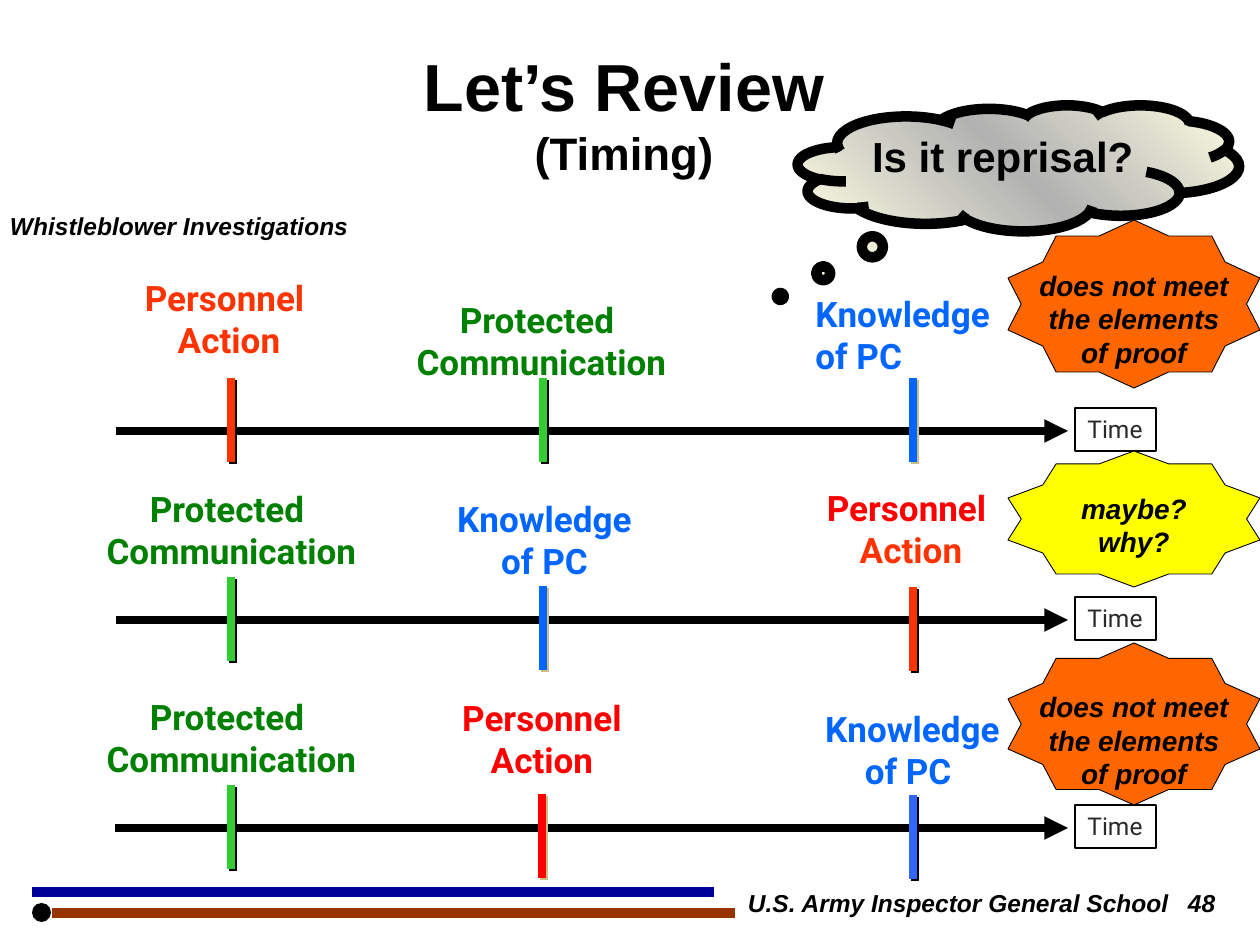
from dataclasses import dataclass

from lxml import etree
from copy import deepcopy
from pptx import Presentation
from pptx import util as u
from pptx.dml.color import RGBColor
from pptx.enum import shapes, text
from pptx.oxml.ns import qn

PX = 914400 / 126
BLACK, GREEN, BLUE = "000000", "008000", "0066FF"
ORANGE, RED, LIME, TAN = "FF3300", "FF0000", "33CC33", "CBBD83"
CENTER, LEFT = text.PP_ALIGN.CENTER, text.PP_ALIGN.LEFT
TOP, MIDDLE = text.MSO_ANCHOR.TOP, text.MSO_ANCHOR.MIDDLE
TICK_HEIGHT = 84


@dataclass
class Event:
    """A labelled tick on a timeline; label_x is the label's centre."""
    words: str
    label_x: int
    label_top: int
    label_width: int
    label_colors: tuple[str, ...]
    tick_x: int
    tick_top: int
    tick_color: str
    shadow: str = BLACK
    align: text.PP_ALIGN = CENTER


@dataclass
class Timeline:
    y: int
    left: int
    events: list[Event]


@dataclass
class Verdict:
    words: str
    top: int
    height: int
    fill: str


PERSONNEL, PROTECTED, KNOWLEDGE = (
    "Personnel \nAction", "Protected \nCommunication", "Knowledge\nof PC")
FAILS = "does not meet\nthe elements\nof proof"

TIMELINES = [
    Timeline(431, 116, [
        Event(PERSONNEL, 229, 270, 212, (ORANGE,), 231, 378, ORANGE),
        Event(KNOWLEDGE, 914, 286, 223, (BLUE,), 913, 378, BLUE, TAN, LEFT),
        Event(PROTECTED, 541, 292, 301, (GREEN,), 543, 378, LIME),
    ]),
    Timeline(620, 116, [
        Event(PROTECTED, 231, 481, 301, (GREEN,), 231, 577, LIME),
        Event(KNOWLEDGE, 544, 491, 223, (BLUE,), 543, 586, BLUE, TAN),
        Event(PERSONNEL, 911, 480, 212, (RED, ORANGE), 913, 587, ORANGE),
    ]),
    Timeline(828, 115, [
        Event(PROTECTED, 231, 689, 301, (GREEN,), 231, 785, LIME),
        Event("Personnel\nAction", 542, 690, 202, (RED,), 542, 794, RED, TAN),
        Event("Knowledge\nof PC ", 912, 701, 223, (BLUE,), 913, 795, "3366FF"),
    ]),
]

VERDICTS = [
    Verdict(FAILS, 220, 168, "FF6600"),
    Verdict(FAILS, 643, 162, "FF6600"),
    Verdict("maybe?\nwhy?", 451, 136, "FFFF00"),
]


def px(length: int) -> int:
    return round(length * PX)


def color(value: str) -> RGBColor:
    return RGBColor.from_string(value)


def style(span, size: int, value: str, font="Arial", bold=True, italic=False) -> None:
    span.font.name, span.font.size = font, u.Pt(size)
    span.font.bold, span.font.italic = bold, italic
    span.font.color.rgb = color(value)


def write(shape, words: str, size: int, values=(BLACK,), align=CENTER,
          anchor=TOP, wrap=True, **look) -> None:
    """Fill a shape with paragraphs; the last colour serves the remaining ones."""
    frame = shape.text_frame
    frame.text = words
    frame.word_wrap, frame.vertical_anchor = wrap, anchor
    for index, para in enumerate(frame.paragraphs):
        para.alignment = align
        for span in para.runs:
            style(span, size, values[min(index, len(values) - 1)], **look)


def add_box(page, left: int, top: int, width: int, height: int):
    return page.shapes.add_textbox(px(left), px(top), px(width), px(height))


def add_shape(page, kind, left: int, top: int, width: int, height: int,
              fill: str | None = None, outline: float = 0):
    shape = page.shapes.add_shape(kind, px(left), px(top), px(width), px(height))
    shape.shadow.inherit = False
    if fill:
        shape.fill.solid()
        shape.fill.fore_color.rgb = color(fill)
    else:
        shape.fill.background()
    if outline:
        shape.line.color.rgb = color(BLACK)
        shape.line.width = u.Pt(outline)
    else:
        shape.line.fill.background()
    return shape


def add_line(page, x1: int, y1: int, x2: int, y2: int, value: str,
             width: float = 4.5, arrow=False, shadow: str | None = None) -> None:
    line = page.shapes.add_connector(
        shapes.MSO_CONNECTOR.STRAIGHT, px(x1), px(y1), px(x2), px(y2))
    line.line.color.rgb = color(value)
    line.line.width = u.Pt(width)
    properties = line._element.spPr
    if arrow:
        etree.SubElement(properties.find(qn("a:ln")), qn("a:tailEnd"), type="triangle")
    effects = etree.SubElement(properties, qn("a:effectLst"))
    if shadow:
        cast = etree.SubElement(effects, qn("a:outerShdw"), dist="17780",
                                dir="2700000", algn="ctr", rotWithShape="0")
        etree.SubElement(cast, qn("a:srgbClr"), val=shadow)


def draw_timeline(page, timeline: Timeline) -> None:
    box = add_shape(page, shapes.MSO_SHAPE.RECTANGLE, 1075, timeline.y - 23, 81, 43,
                    outline=0.75)
    write(box, "Time", 14, ("292929",), LEFT, wrap=False, font="Roboto", bold=False)
    box.text_frame.auto_size = text.MSO_AUTO_SIZE.SHAPE_TO_FIT_TEXT
    add_line(page, timeline.left, timeline.y, 1068, timeline.y, BLACK, arrow=True)
    for event in timeline.events:
        add_line(page, event.tick_x, event.tick_top, event.tick_x,
                 event.tick_top + TICK_HEIGHT, event.tick_color, shadow=event.shadow)
        label = add_box(page, event.label_x - event.label_width // 2,
                        event.label_top, event.label_width, 97)
        write(label, event.words, 20, event.label_colors, event.align,
              wrap=False, font="Roboto")
        label.text_frame.auto_size = text.MSO_AUTO_SIZE.SHAPE_TO_FIT_TEXT


def draw_cloud(page) -> None:
    cloud = add_shape(page, shapes.MSO_SHAPE.CLOUD_CALLOUT, 798, 105, 441, 126, outline=6)
    cloud.adjustments[0], cloud.adjustments[1] = -0.54, 1.02
    cloud.fill.gradient()
    cloud.fill.gradient_angle = 45
    stop_list = cloud._element.spPr.find(".//" + qn("a:gsLst"))
    stop_list.append(deepcopy(stop_list[0]))
    tints = ("FEFDE3", "B2B2B2", "FEFDE3")
    for index, (stop, tint) in enumerate(zip(cloud.fill.gradient_stops, tints)):
        stop.position, stop.color.rgb = index / 2, color(tint)
    write(cloud, "Is it reprisal?", 24)


def draw_footer(page) -> None:
    add_line(page, 32, 892, 714, 892, "000099", 6)
    add_line(page, 52, 913, 735, 913, "993300", 6)
    add_shape(page, shapes.MSO_SHAPE.OVAL, 32, 903, 19, 19, BLACK)
    footer = add_box(page, 703, 882, 557, 63)
    write(footer, "U.S. Army Inspector General School\t48", 14, align=LEFT, italic=True)
    footer.text_frame.margin_left = px(45)
    properties = footer.text_frame.paragraphs[0]._p.get_or_add_pPr()
    tabs = etree.SubElement(properties, qn("a:tabLst"))
    etree.SubElement(tabs, qn("a:tab"), pos=str(px(440)), algn="l")


def main() -> None:
    deck = Presentation()
    deck.slide_width, deck.slide_height = px(1260), px(945)
    page = deck.slides.add_slide(deck.slide_layouts[5])

    # Title and section name
    title = page.shapes.title
    title.left, title.top, title.width, title.height = map(px, (181, 55, 886, 115))
    write(title, "Let’s Review\v(Timing)", 38, anchor=MIDDLE)
    title.text_frame.auto_size = text.MSO_AUTO_SIZE.NONE
    title.text_frame.paragraphs[0].runs[1].font.size = u.Pt(26)
    section = add_box(page, -23, 205, 567, 63)
    write(section, "Whistleblower Investigations", 14, align=LEFT, italic=True)
    section.text_frame.margin_left = px(33)

    draw_footer(page)
    for timeline in TIMELINES:
        draw_timeline(page, timeline)
    draw_cloud(page)

    # Verdict stars
    for verdict in VERDICTS:
        star = add_shape(page, shapes.MSO_SHAPE.STAR_10_POINT, 1008, verdict.top,
                         252, verdict.height, verdict.fill, 0.5)
        write(star, verdict.words, 16, wrap=False, italic=True)

    deck.save("out.pptx")


if __name__ == "__main__":
    main()
